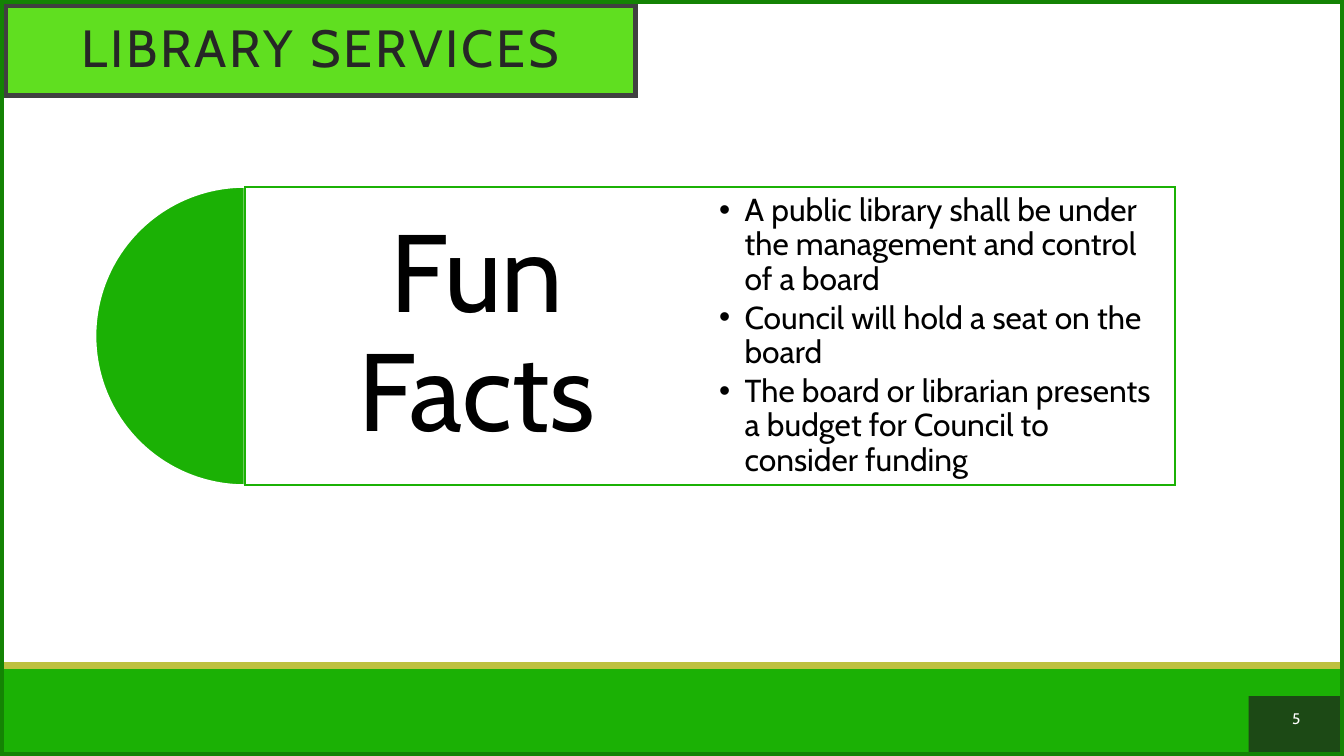
from lxml.etree import SubElement
from pptx import Presentation
from pptx.dml.color import RGBColor
from pptx.enum.shapes import MSO_CONNECTOR, MSO_SHAPE
from pptx.enum.text import MSO_ANCHOR, MSO_AUTO_SIZE, PP_ALIGN
from pptx.oxml.ns import qn
from pptx.util import Inches, Pt

FONT = "Cabin"
GREEN = RGBColor(0x1B, 0xB1, 0x05)
LIME = RGBColor(0x60, 0xDF, 0x20)
FOREST = RGBColor(0x14, 0x83, 0x04)
OLIVE = RGBColor(0xBE, 0xC1, 0x3F)
GRAY = RGBColor(0x40, 0x40, 0x40)
INK = RGBColor(0x26, 0x26, 0x26)
DARK = RGBColor(0x1D, 0x1D, 0x1D)
BLACK = RGBColor(0, 0, 0)
WHITE = RGBColor(0xFF, 0xFF, 0xFF)

WIDTH = 10
HEIGHT = WIDTH * 9 / 16
BAR_TOP = 4.95
CARD_LEFT, CARD_TOP, CARD_SIZE = 1.82, 1.39, 2.22
HALF = 3.46
FACTS = [
    "A public library shall be under the management and control of a board",
    "Council will hold a seat on the board",
    "The board or librarian presents a budget for Council to consider funding",
]


def place(shape, left, top, width, height):
    shape.left, shape.top = Inches(left), Inches(top)
    shape.width, shape.height = Inches(width), Inches(height)


def paint(shape, fill=None, line=None, weight=1, alpha=None):
    if fill is None:
        shape.fill.background()
    else:
        shape.fill.solid()
        shape.fill.fore_color.rgb = fill
    if alpha is not None:
        color = shape.fill._xPr.find(qn("a:solidFill"))[0]
        SubElement(color, qn("a:alpha"), val=str(alpha * 1000))
    if line is None:
        shape.line.fill.background()
    else:
        shape.line.color.rgb = line
        shape.line.width = Pt(weight)
        SubElement(shape._element.spPr.find(qn("a:ln")), qn("a:miter"), lim="800000")


def add_block(slide, box, kind=MSO_SHAPE.RECTANGLE, **look):
    shape = slide.shapes.add_shape(kind, *map(Inches, box))
    shape.shadow.inherit = False
    paint(shape, **look)
    return shape


def add_rule(slide, left, right, top, color, weight):
    rule = slide.shapes.add_connector(
        MSO_CONNECTOR.STRAIGHT, Inches(left), Inches(top), Inches(right), Inches(top))
    rule.line.color.rgb = color
    rule.line.width = Pt(weight)
    SubElement(rule._element.spPr, qn("a:effectLst"))


def set_frame(shape, inset, anchor=MSO_ANCHOR.MIDDLE):
    frame = shape.text_frame
    frame.word_wrap = True
    frame.auto_size = MSO_AUTO_SIZE.NONE
    frame.vertical_anchor = anchor
    frame.margin_left = frame.margin_right = Inches(inset)
    frame.margin_top = frame.margin_bottom = Inches(inset)
    return frame


def style(para, size, color, align=PP_ALIGN.CENTER, lines=0.9):
    para.alignment = align
    para.line_spacing = lines
    para.space_before = Pt(0)
    para.font.name = FONT
    para.font.size = Pt(size)
    para.font.color.rgb = color


def add_bullet(para):
    props = para._p.get_or_add_pPr()
    props.set("marL", str(Inches(0.19)))
    props.set("indent", str(-Inches(0.19)))
    SubElement(props, qn("a:buFont"), typeface="Arial")
    SubElement(props, qn("a:buChar"), char="•")


def fill_title(title):
    place(title, 0.04, 0.04, 4.69, 0.67)
    paint(title, LIME, GRAY, 2.5)
    para = set_frame(title, 0.1).paragraphs[0]
    run = para.add_run()
    run.text = "LIBRARY SERVICES"
    run._r.get_or_add_rPr().set("spc", "150")
    style(para, 28, INK)


def fill_list(body):
    place(body, CARD_LEFT + HALF, CARD_TOP, HALF, CARD_SIZE)
    frame = set_frame(body, 0.07)
    for index, fact in enumerate(FACTS):
        para = frame.add_paragraph() if index else frame.paragraphs[0]
        para.text = fact
        para.level = 1
        add_bullet(para)
        style(para, 17, BLACK, PP_ALIGN.LEFT)
        para.space_after = Pt(2.55)


def add_footer(slide):
    add_block(slide, (0.03, BAR_TOP, 9.97, HEIGHT - BAR_TOP), fill=GREEN)
    badge = add_block(slide, (9.29, 5.18, 0.71, HEIGHT - 5.18), fill=DARK, alpha=70)
    frame = set_frame(badge, 0.1, MSO_ANCHOR.TOP)
    frame.text = "5"
    style(frame.paragraphs[0], 8.2, WHITE, lines=1.0)
    add_rule(slide, 0.03, WIDTH, BAR_TOP, OLIVE, 3.5)


def add_card(slide):
    pie = add_block(slide, (CARD_LEFT - CARD_SIZE / 2, CARD_TOP, CARD_SIZE, CARD_SIZE),
                    MSO_SHAPE.PIE, fill=GREEN, line=WHITE)
    pie.adjustments[0], pie.adjustments[1] = 54, 162
    add_block(slide, (CARD_LEFT, CARD_TOP, 2 * HALF, CARD_SIZE),
              fill=WHITE, line=GREEN, alpha=90)
    label = slide.shapes.add_textbox(
        *map(Inches, (CARD_LEFT, CARD_TOP, HALF, CARD_SIZE)))
    frame = set_frame(label, 0.25)
    frame.text = "Fun Facts"
    style(frame.paragraphs[0], 59, BLACK)


def main():
    deck = Presentation()
    deck.slide_width, deck.slide_height = Inches(WIDTH), Inches(HEIGHT)
    slide = deck.slides.add_slide(deck.slide_layouts[1])
    body = slide.placeholders[1]
    fill_title(slide.shapes.title)
    add_footer(slide)
    add_block(slide, (0, 0, WIDTH, HEIGHT), line=FOREST, weight=4)
    add_card(slide)
    fill_list(body)
    slide.shapes._spTree.append(body._element)
    deck.save("out.pptx")


if __name__ == "__main__":
    main()
